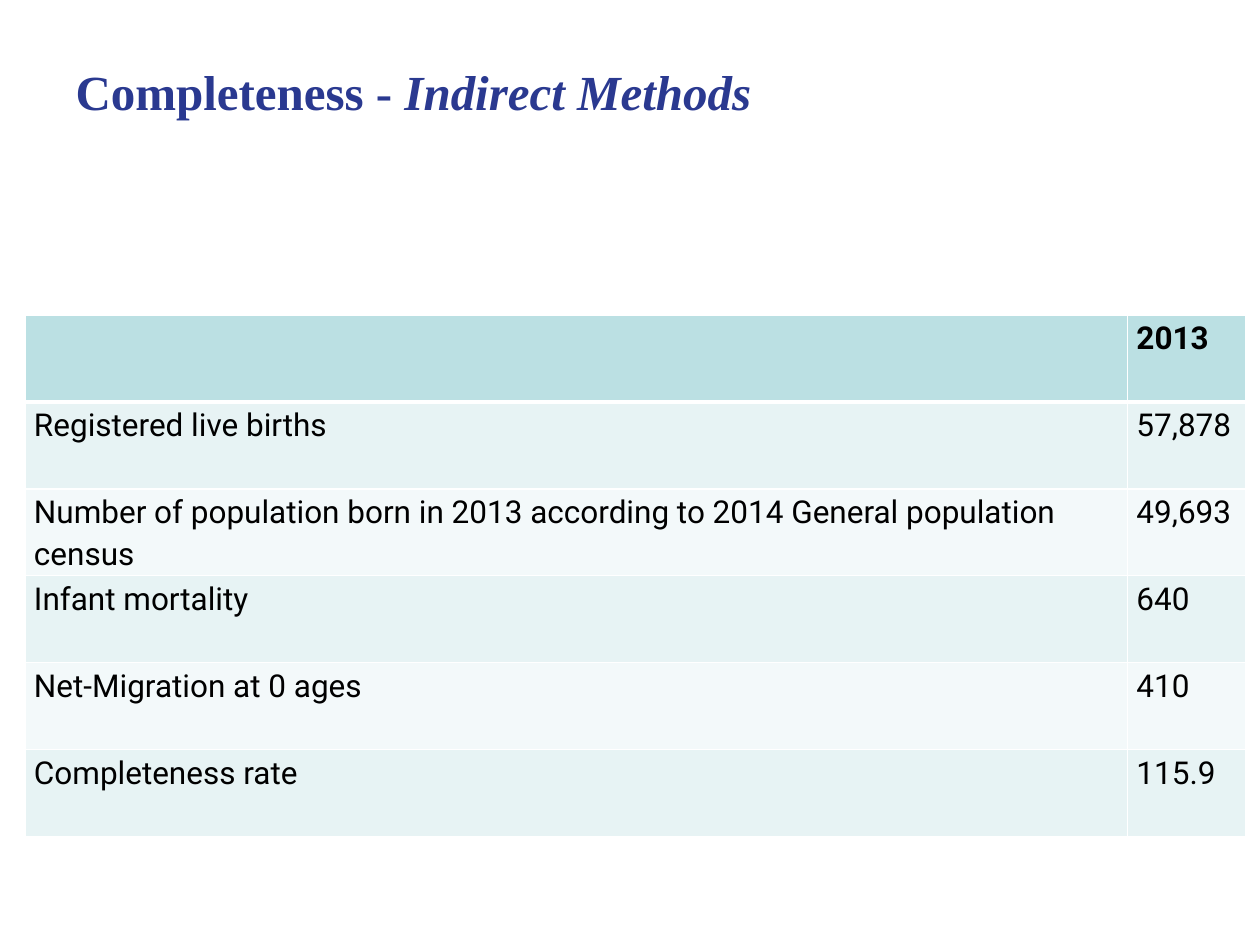
from lxml import etree
from pptx import Presentation
from pptx.dml.color import RGBColor
from pptx.enum.text import MSO_ANCHOR, PP_ALIGN
from pptx.oxml.ns import qn
from pptx.util import Inches, Pt

MIDDLE = MSO_ANCHOR.MIDDLE
LEFT = PP_ALIGN.LEFT
TITLE_ONLY = 5

NAVY, BLACK, WHITE = "2A3990", "000000", "FFFFFF"
HEAD, BANDS = "BBE0E3", ("E7F3F4", "F3F9FA")

ROWS = [
    ("", "2013"),
    ("Registered live births", "57,878"),
    ("Number of population born in 2013 according to 2014 General population census",
     "49,693"),
    ("Infant mortality", "640"),
    ("Net-Migration at 0 ages", "410"),
    ("Completeness rate", "115.9"),
]
WIDTHS = (8.75, 0.94)
ROW_HEIGHT = 0.69


def color(code):
    return RGBColor.from_string(code)


def add_text(para, text, font="Roboto", size=18, fill=BLACK, bold=False, italic=False):
    run = para.add_run()
    run.text = text
    run.font.name = font
    run.font.size = Pt(size)
    run.font.bold = bold
    run.font.italic = italic
    run.font.color.rgb = color(fill)


def add_title(slide):
    title = slide.shapes.title
    title.left, title.top = Inches(0.5), Inches(0.3)
    title.width, title.height = Inches(8.14), Inches(0.85)
    frame = title.text_frame
    frame.word_wrap = True
    frame.vertical_anchor = MIDDLE
    para = frame.paragraphs[0]
    para.alignment = LEFT
    style = dict(font="Times New Roman", size=28, fill=NAVY, bold=True)
    add_text(para, "Completeness - ", **style)
    add_text(para, "Indirect Methods", italic=True, **style)


def set_border(cell, bottom):
    """Draw white cell edges; call before the fill, which must follow them."""
    props = cell._tc.get_or_add_tcPr()
    for side, width in (("L", 1), ("R", 1), ("T", 1), ("B", bottom)):
        line = etree.SubElement(props, qn(f"a:ln{side}"), w=str(Pt(width)))
        solid = etree.SubElement(line, qn("a:solidFill"))
        etree.SubElement(solid, qn("a:srgbClr"), val=WHITE)


def fill_cell(cell, text, fill, head):
    set_border(cell, 3 if head else 1)
    cell.fill.solid()
    cell.fill.fore_color.rgb = color(fill)
    cell.margin_left = cell.margin_right = Inches(0.07)
    cell.margin_top = cell.margin_bottom = 0
    if text:
        para = cell.text_frame.paragraphs[0]
        para.line_spacing = 1.15
        add_text(para, text, bold=head)


def add_grid(slide):
    frame = slide.shapes.add_table(
        len(ROWS), len(WIDTHS), Inches(0.2), Inches(2.5),
        Inches(sum(WIDTHS)), Inches(ROW_HEIGHT * len(ROWS)))
    table = frame.table
    for col, width in zip(table.columns, WIDTHS):
        col.width = Inches(width)
    for i, (row, texts) in enumerate(zip(table.rows, ROWS)):
        row.height = Inches(ROW_HEIGHT)
        head = i == 0
        fill = HEAD if head else BANDS[(i - 1) % 2]
        for cell, text in zip(row.cells, texts):
            fill_cell(cell, text, fill, head)


def main():
    deck = Presentation()
    deck.slide_width, deck.slide_height = Inches(10), Inches(7.5)
    slide = deck.slides.add_slide(deck.slide_layouts[TITLE_ONLY])
    add_title(slide)
    add_grid(slide)
    deck.save("out.pptx")


if __name__ == "__main__":
    main()
